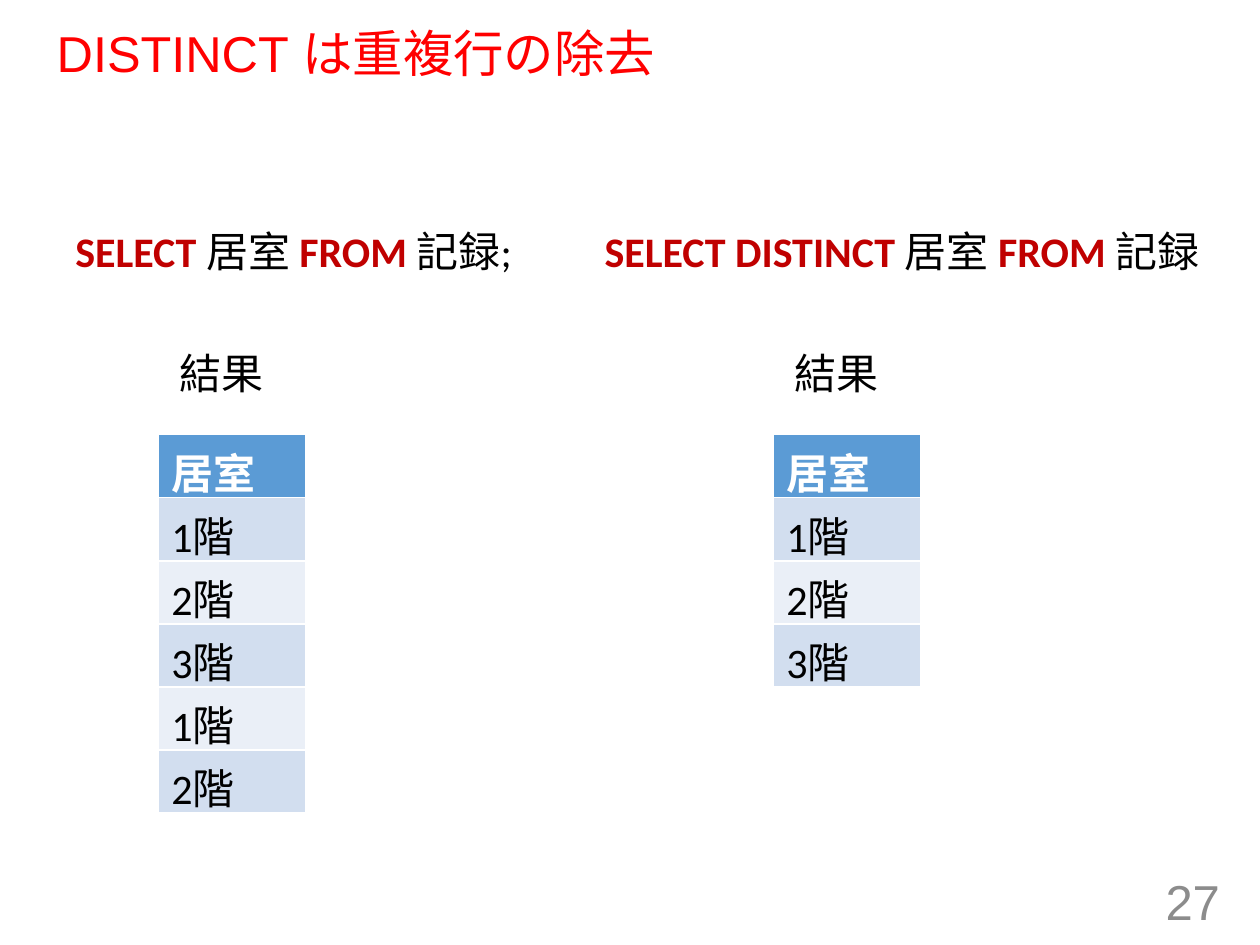
from dataclasses import dataclass

from pptx import Presentation
from pptx.dml.color import RGBColor
from pptx.enum.text import MSO_ANCHOR, PP_ALIGN
from pptx.util import Inches, Pt

RED = RGBColor(0xFF, 0x00, 0x00)
KEYWORD = RGBColor(0xC0, 0x00, 0x00)
BLACK = RGBColor(0x00, 0x00, 0x00)
WHITE = RGBColor(0xFF, 0xFF, 0xFF)
GRAY = RGBColor(0x8C, 0x8C, 0x8C)
HEADER = RGBColor(0x5B, 0x9B, 0xD5)
BANDS = (RGBColor(0xD2, 0xDE, 0xEF), RGBColor(0xEA, 0xEF, 0xF7))

LEFT, RIGHT = PP_ALIGN.LEFT, PP_ALIGN.RIGHT
TOP, MIDDLE = MSO_ANCHOR.TOP, MSO_ANCHOR.MIDDLE

WIDTH, HEIGHT = Inches(10), Inches(7.5)
ROW = Inches(0.5)
QUERY_TOP, RESULT_TOP, TABLE_TOP = Inches(1.74), Inches(2.71), Inches(3.45)
TABLE_WIDTH, LABEL_WIDTH = Inches(1.17), Inches(0.88)
LABEL_INDENT = Inches(0.07)


@dataclass
class Query:
    left: float
    width: float
    table_left: float
    select: str
    source: str
    rooms: tuple[str, ...]


QUERIES = (
    Query(0.5, 3.7, 1.26, "SELECT ", "記録;", ("1階", "2階", "3階", "1階", "2階")),
    Query(4.7, 4.97, 6.14, "SELECT DISTINCT ", "記録", ("1階", "2階", "3階")),
)


def style(p, size: float, color: RGBColor, font: str = "Calibri", bold: bool = False) -> None:
    p.font.size = Pt(size)
    p.font.name = font
    p.font.color.rgb = color
    p.font.bold = bold


def add_text(s, left: int, top: int, width: int, height: int, anchor=TOP):
    tf = s.shapes.add_textbox(left, top, width, height).text_frame
    tf.word_wrap = True
    tf.vertical_anchor = anchor
    return tf.paragraphs[0]


def add_title(s, text: str) -> None:
    sp = s.shapes.title
    sp.left, sp.top = Inches(0.35), Inches(0.19)
    sp.width, sp.height = Inches(9.25), Inches(0.51)
    tf = sp.text_frame
    tf.text = text
    tf.vertical_anchor = MIDDLE
    p = tf.paragraphs[0]
    p.alignment = LEFT
    p.line_spacing = 0.9
    style(p, 28.8, RED, "Arial")


def add_statement(s, query: Query) -> None:
    p = add_text(s, Inches(query.left), QUERY_TOP, Inches(query.width), ROW)
    style(p, 24, BLACK)
    parts = ((query.select, True), ("居室 ", False), ("FROM ", True), (query.source, False))
    for text, keyword in parts:
        r = p.add_run()
        r.text = text
        r.font.bold = keyword
        r.font.color.rgb = KEYWORD if keyword else BLACK


def add_result(s, query: Query) -> None:
    left = Inches(query.table_left)
    rows = ("居室", *query.rooms)
    table = s.shapes.add_table(
        len(rows), 1, left, TABLE_TOP, TABLE_WIDTH, ROW * len(rows)
    ).table
    for i, text in enumerate(rows):
        cell = table.cell(i, 0)
        cell.text = text
        cell.vertical_anchor = MIDDLE
        cell.fill.solid()
        cell.fill.fore_color.rgb = BANDS[(i - 1) % 2] if i else HEADER
        style(cell.text_frame.paragraphs[0], 24, BLACK if i else WHITE, bold=i == 0)
    p = add_text(s, left + LABEL_INDENT, RESULT_TOP, LABEL_WIDTH, ROW)
    p.text = "結果"
    style(p, 24, BLACK)


def add_page_number(s, number: str) -> None:
    p = add_text(s, Inches(7.53), Inches(6.95), Inches(2.25), Inches(0.4), MIDDLE)
    p.text = number
    p.alignment = RIGHT
    style(p, 28, GRAY, "Arial")


def main() -> None:
    prs = Presentation()
    prs.slide_width, prs.slide_height = WIDTH, HEIGHT
    s = prs.slides.add_slide(prs.slide_layouts[5])
    add_title(s, "DISTINCT は重複行の除去")
    add_page_number(s, "27")
    for query in QUERIES:
        add_statement(s, query)
        add_result(s, query)
    prs.save("out.pptx")


if __name__ == "__main__":
    main()
